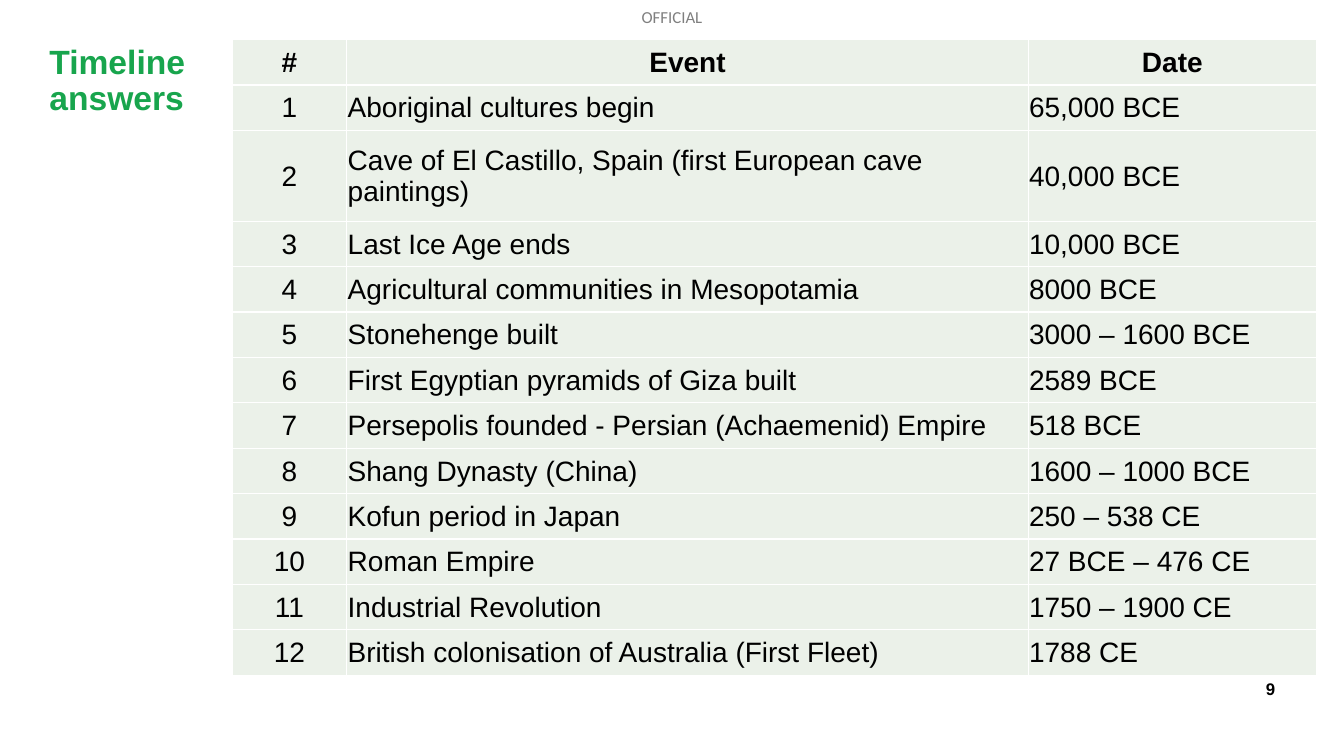
import lxml.etree
import pptx
import pptx.dml.color
import pptx.enum.text
import pptx.oxml
import pptx.oxml.ns
import pptx.util

Pt = pptx.util.Pt
RGB = pptx.dml.color.RGBColor
ALIGN = pptx.enum.text.PP_ALIGN
ANCHOR = pptx.enum.text.MSO_ANCHOR
qn = pptx.oxml.ns.qn

GREEN = RGB(0x18, 0xA5, 0x4D)
BLACK = RGB(0, 0, 0)
WHITE = RGB(0xFF, 0xFF, 0xFF)
PALE = RGB(0xEB, 0xF1, 0xE9)

EVENTS = [
    ("Aboriginal cultures begin", "65,000 BCE"),
    ("Cave of El Castillo, Spain (first European cave paintings)", "40,000 BCE"),
    ("Last Ice Age ends", "10,000 BCE"),
    ("Agricultural communities in Mesopotamia", "8000 BCE"),
    ("Stonehenge built", "3000 – 1600 BCE"),
    ("First Egyptian pyramids of Giza built", "2589 BCE"),
    ("Persepolis founded - Persian (Achaemenid) Empire", "518 BCE"),
    ("Shang Dynasty (China)", "1600 – 1000 BCE"),
    ("Kofun period in Japan", "250 – 538 CE"),
    ("Roman Empire", "27 BCE – 476 CE"),
    ("Industrial Revolution", "1750 – 1900 CE"),
    ("British colonisation of Australia (First Fleet)", "1788 CE"),
]


class Page:
    """Holds the text style and the slide being built."""

    def __init__(self, slide, face="Arial"):
        self.slide = slide
        self.face = face

    def style(self, frame, text, size, color=BLACK, bold=False, align=ALIGN.LEFT, face=None):
        frame.text = text
        para = frame.paragraphs[0]
        para.alignment = align
        font = para.runs[0].font
        font.name = face or self.face
        font.size = Pt(size)
        font.bold = bold
        font.color.rgb = color
        return para

    def fit(self, shape, box, anchor):
        shape.left, shape.top, shape.width, shape.height = map(Pt, box)
        frame = shape.text_frame
        frame.word_wrap = True
        frame.auto_size = pptx.enum.text.MSO_AUTO_SIZE.NONE
        frame.vertical_anchor = anchor
        frame.margin_left = frame.margin_right = 0
        frame.margin_top = frame.margin_bottom = 0
        return frame

    def title(self, text, box):
        frame = self.fit(self.slide.shapes.title, box, ANCHOR.TOP)
        para = self.style(frame, text, 24, GREEN, True)
        para.line_spacing = 0.9
        para.space_before = Pt(0)

    def label(self, text, box, alpha=None, anchor=ANCHOR.TOP, **look):
        shape = self.slide.shapes.add_textbox(*map(Pt, box))
        para = self.style(self.fit(shape, box, anchor), text, 12, **look)
        if alpha:
            tint = next(para.runs[0].font._element.iter(qn("a:srgbClr")))
            lxml.etree.SubElement(tint, qn("a:alpha")).set("val", str(alpha * 1000))

    def edge(self, cell):
        props = cell._tc.get_or_add_tcPr()
        for i, side in enumerate(("lnL", "lnR", "lnT", "lnB")):
            line = pptx.oxml.parse_xml(
                f'<a:{side} {pptx.oxml.ns.nsdecls("a")} w="12700"><a:solidFill>'
                f'<a:srgbClr val="{WHITE}"/></a:solidFill></a:{side}>'
            )
            props.insert(i, line)

    def table(self, rows, left, top, widths, heights):
        box = (left, top, sum(widths), sum(heights))
        grid = self.slide.shapes.add_table(len(rows), len(widths), *map(Pt, box)).table
        grid.horz_banding = False
        for col, width in zip(grid.columns, widths):
            col.width = Pt(width)
        for r, (row, height) in enumerate(zip(rows, heights)):
            grid.rows[r].height = Pt(height)
            for c, text in enumerate(row):
                cell = grid.cell(r, c)
                cell.fill.solid()
                cell.fill.fore_color.rgb = PALE
                cell.vertical_anchor = ANCHOR.MIDDLE
                cell.margin_left = cell.margin_right = cell.margin_top = Pt(0.6)
                cell.margin_bottom = 0
                align = ALIGN.CENTER if r == 0 or c == 0 else ALIGN.LEFT
                self.style(cell.text_frame, text, 20, bold=r == 0, align=align)
                self.edge(cell)


def main():
    deck = pptx.Presentation()
    deck.slide_width, deck.slide_height = Pt(960), Pt(540)
    page = Page(deck.slides.add_slide(deck.slide_layouts[5]))
    page.label("OFFICIAL", (450, 5, 60, 14.4), alpha=50, align=ALIGN.CENTER, face="Calibri")
    page.title("Timeline answers", (35.3, 32.4, 114.5, 69))
    rows = [("#", "Event", "Date")]
    rows += [(str(n), *event) for n, event in enumerate(EVENTS, 1)]
    unit = 32.45
    heights = [unit * (2 if row[0] == "2" else 1) for row in rows]
    page.table(rows, 165.8, 28.3, (82, 486.7, 205.9), heights)
    page.label("9", (695.5, 479.5, 215.3, 25.2), anchor=ANCHOR.MIDDLE, bold=True, align=ALIGN.RIGHT)
    deck.save("out.pptx")


if __name__ == "__main__":
    main()
